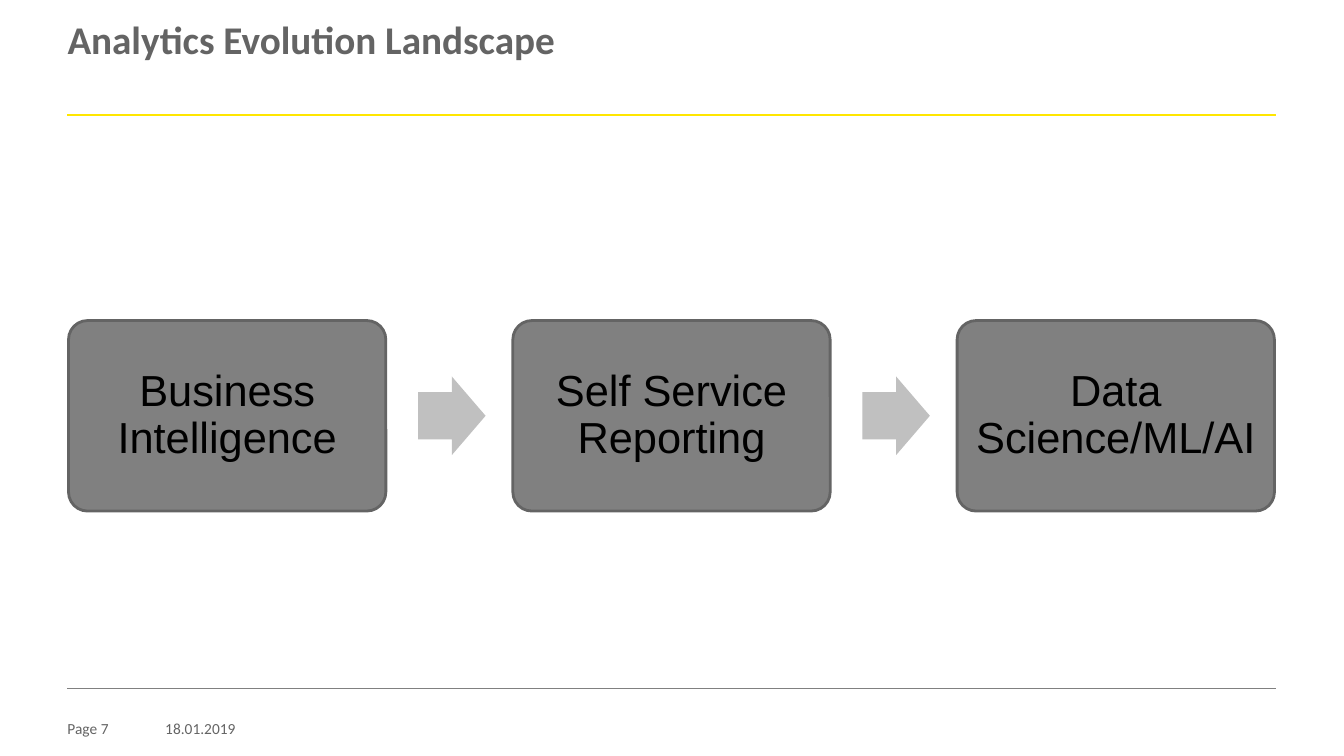
from pptx import Presentation
from pptx.dml.color import RGBColor
from pptx.enum.shapes import MSO_CONNECTOR, MSO_SHAPE
from pptx.enum.text import MSO_ANCHOR, PP_ALIGN
from pptx.oxml.ns import qn
from pptx.util import Inches, Pt
from lxml import etree

STRAIGHT = MSO_CONNECTOR.STRAIGHT
ROUNDED = MSO_SHAPE.ROUNDED_RECTANGLE
RIGHT_ARROW = MSO_SHAPE.RIGHT_ARROW
TOP, MIDDLE = MSO_ANCHOR.TOP, MSO_ANCHOR.MIDDLE
LEFT, CENTER = PP_ALIGN.LEFT, PP_ALIGN.CENTER

DARK_GRAY = RGBColor(0x64, 0x64, 0x64)
MID_GRAY = RGBColor(0x80, 0x80, 0x80)
LIGHT_GRAY = RGBColor(0xC0, 0xC0, 0xC0)
YELLOW = RGBColor(0xFF, 0xE6, 0x00)
BLACK = RGBColor(0, 0, 0)

MARGIN, RIGHT_EDGE = 0.67, 12.67
STAGES = ["Business Intelligence", "Self Service Reporting", "Data Science/ML/AI"]
STAGE_LEFT, STAGE_TOP, STAGE_WIDTH, STAGE_HEIGHT = 0.68, 3.18, 3.15, 1.89
STAGE_PITCH = 4.41
ARROW_OFFSET, ARROW_WIDTH, ARROW_HEIGHT = 3.47, 0.67, 0.78


class SlideBuilder:
    """Draws styled elements on one slide."""

    def __init__(self, slide):
        self.slide = slide

    def set_text(self, shape, text, size, font="Calibri", color=DARK_GRAY, bold=False,
                 align=LEFT, anchor=TOP, inset=0, spacing=1.0, wrap=True):
        frame = shape.text_frame
        frame.word_wrap = wrap
        frame.vertical_anchor = anchor
        frame.margin_left = frame.margin_right = Inches(inset)
        frame.margin_top = frame.margin_bottom = Inches(inset)
        frame.text = text
        paragraph = frame.paragraphs[0]
        paragraph.alignment = align
        paragraph.line_spacing = spacing
        paragraph.font.name = font
        paragraph.font.size = Pt(size)
        paragraph.font.bold = bold
        paragraph.font.color.rgb = color

    def title(self, text):
        heading = self.slide.shapes.title
        heading.left, heading.top = Inches(MARGIN), Inches(0.22)
        heading.width, heading.height = Inches(12.01), Inches(0.94)
        self.set_text(heading, text, 28, bold=True, spacing=0.85)

    def footer(self, text, left, width, wrap=True):
        label = self.slide.shapes.add_textbox(
            Inches(left), Inches(7.13), Inches(width), Inches(0.22))
        self.set_text(label, text, 11, wrap=wrap)

    def rule(self, y, color, weight):
        rule = self.slide.shapes.add_connector(
            STRAIGHT, Inches(MARGIN), Inches(y), Inches(RIGHT_EDGE), Inches(y))
        rule.line.color.rgb = color
        rule.line.width = Pt(weight)
        etree.SubElement(rule._element.spPr, qn("a:effectLst"))

    def shape(self, kind, left, top, width, height, fill, adjustments):
        shape = self.slide.shapes.add_shape(
            kind, Inches(left), Inches(top), Inches(width), Inches(height))
        shape.shadow.inherit = False
        shape.fill.solid()
        shape.fill.fore_color.rgb = fill
        shape.line.fill.background()
        for index, value in enumerate(adjustments):
            shape.adjustments[index] = value
        return shape

    def stage(self, text, left):
        stage = self.shape(ROUNDED, left, STAGE_TOP, STAGE_WIDTH, STAGE_HEIGHT,
                           MID_GRAY, [0.1])
        stage.line.color.rgb = DARK_GRAY
        stage.line.width = Pt(2)
        self.set_text(stage, text, 31, "Arial", BLACK, align=CENTER, anchor=MIDDLE,
                      inset=0.12, spacing=0.9)

    def arrow(self, left):
        top = STAGE_TOP + (STAGE_HEIGHT - ARROW_HEIGHT) / 2
        self.shape(RIGHT_ARROW, left, top, ARROW_WIDTH, ARROW_HEIGHT,
                   LIGHT_GRAY, [0.6, 0.5])


def main():
    presentation = Presentation()
    presentation.slide_width = Inches(13.34)
    presentation.slide_height = Inches(7.5)
    builder = SlideBuilder(presentation.slides.add_slide(presentation.slide_layouts[5]))

    builder.title("Analytics Evolution Landscape")
    builder.rule(1.14, YELLOW, 1.5)
    builder.rule(6.83, MID_GRAY, 0.25)
    builder.footer("Page 7", MARGIN, 0.97)
    builder.footer("18.01.2019", 1.64, 1.5, wrap=False)

    for index, name in enumerate(STAGES):
        left = STAGE_LEFT + index * STAGE_PITCH
        builder.stage(name, left)
        if index < len(STAGES) - 1:
            builder.arrow(left + ARROW_OFFSET)

    presentation.save("out.pptx")


if __name__ == "__main__":
    main()
